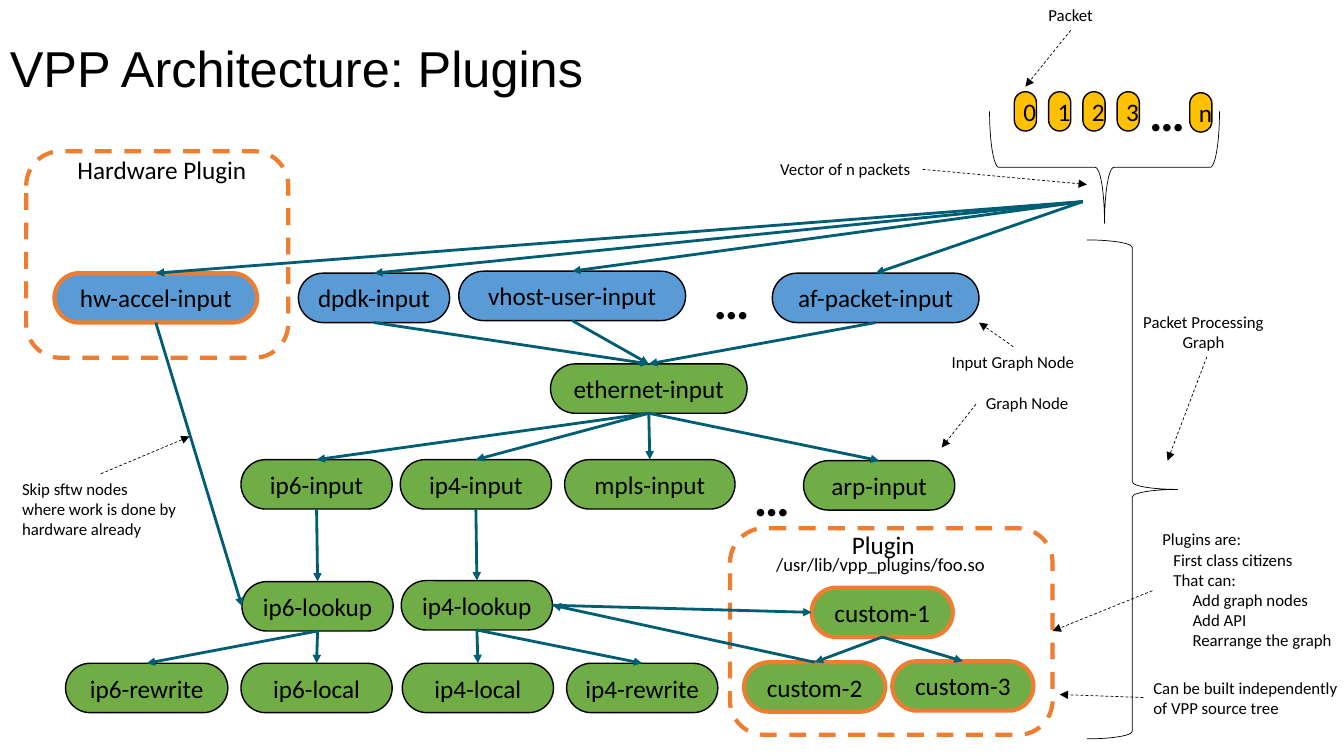
from lxml import etree
from pptx import Presentation
from pptx import util as u
from pptx.dml.color import RGBColor
from pptx.enum import dml, shapes, text
from pptx.oxml import ns

COLORS = {
    "ink": "000000", "packet": "FFC000", "input": "5B9BD5",
    "graph": "70AD47", "plugin": "ED7D31", "flow": "005E74",
}
TOP, LEFT, BOTTOM, RIGHT = range(4)  # connection sites of a rounded box
NODE_HEIGHT = 0.49


class Diagram:
    """Draws styled elements on the current slide."""

    font = "Calibri"

    def __init__(self, slide):
        self.slide = slide
        self.nodes = {}

    @staticmethod
    def color(name):
        return RGBColor.from_string(COLORS[name])

    def run(self, paragraph, words, size, font=None, bold=False):
        run = paragraph.add_run()
        run.text = words
        run.font.name = font or self.font
        run.font.size = u.Pt(size)
        run.font.bold = bold
        run.font.color.rgb = self.color("ink")

    def stroke(self, line, color, width, dashed=False):
        line.color.rgb = self.color(color)
        line.width = u.Pt(width)
        if dashed:
            line.dash_style = dml.MSO_LINE.DASH

    def shape(self, kind, box, line, width, fill=None, dashed=False):
        shape = self.slide.shapes.add_shape(kind, *map(u.Inches, box))
        shape.shadow.inherit = False
        if fill:
            shape.fill.solid()
            shape.fill.fore_color.rgb = self.color(fill)
        else:
            shape.fill.background()
        self.stroke(shape.line, line, width, dashed)
        return shape

    def pill(self, label, box, fill, line="ink", width=1):
        shape = self.shape(shapes.MSO_SHAPE.ROUNDED_RECTANGLE, box, line, width, fill)
        shape.adjustments[0] = 0.5
        frame = shape.text_frame
        frame.vertical_anchor = text.MSO_ANCHOR.MIDDLE
        paragraph = frame.paragraphs[0]
        paragraph.alignment = text.PP_ALIGN.CENTER
        self.run(paragraph, label, 18)
        return shape

    def node(self, label, left, top, width, fill, in_plugin=False):
        outline = ("plugin", 3) if in_plugin else ("ink", 1)
        box = (left, top, width, NODE_HEIGHT)
        self.nodes[label] = self.pill(label, box, fill, *outline)

    def plugin_frame(self, *box):
        self.shape(shapes.MSO_SHAPE.ROUNDED_RECTANGLE, box, "plugin", 3, dashed=True)

    def brace(self, box, rotation):
        self.shape(shapes.MSO_SHAPE.LEFT_BRACE, box, "ink", 0.5).rotation = rotation

    def label(self, box, lines, size=12, bold=False):
        """Each line is a string or (string, indent in inches, alignment)."""
        frame = self.slide.shapes.add_textbox(*map(u.Inches, box)).text_frame
        frame.word_wrap = False
        frame.auto_size = text.MSO_AUTO_SIZE.SHAPE_TO_FIT_TEXT
        for index, line in enumerate(lines):
            words, indent, alignment = (line, 0, None) if isinstance(line, str) else line
            paragraph = frame.add_paragraph() if index else frame.paragraphs[0]
            if indent:
                paragraph._p.get_or_add_pPr().set("marL", str(u.Inches(indent)))
            paragraph.alignment = alignment
            self.run(paragraph, words, size, bold=bold)

    def ellipsis(self, left, top):
        self.label((left, top, 0.56, 0.71), ["…"], 36, bold=True)

    def title(self, box, words):
        frame = self.slide.shapes.add_textbox(*map(u.Inches, box)).text_frame
        frame.word_wrap = True
        frame.vertical_anchor = text.MSO_ANCHOR.MIDDLE
        frame.paragraphs[0].line_spacing = 0.9
        self.run(frame.paragraphs[0], words, 36, "Arial")

    def arrow(self, start, end, color="ink", width=0.5, dashed=True):
        arrow = self.slide.shapes.add_connector(
            shapes.MSO_CONNECTOR.STRAIGHT, *map(u.Inches, (*start, *end)))
        self.stroke(arrow.line, color, width, dashed)
        head = etree.SubElement(arrow.line._get_or_add_ln(), ns.qn("a:tailEnd"))
        head.set("type", "triangle")
        etree.SubElement(arrow._element.spPr, ns.qn("a:effectLst"))
        return arrow

    def flow(self, source, target, leave=BOTTOM, enter=TOP):
        """Source is a node label or a point."""
        from_node = isinstance(source, str)
        start = (0, 0) if from_node else source
        arrow = self.arrow(start, (0, 0), "flow", 2, dashed=False)
        if from_node:
            arrow.begin_connect(self.nodes[source], leave)
        arrow.end_connect(self.nodes[target], enter)


def main():
    presentation = Presentation()
    presentation.slide_width = u.Inches(13.33)
    presentation.slide_height = u.Inches(7.5)
    diagram = Diagram(presentation.slides.add_slide(presentation.slide_layouts[6]))

    diagram.title((0, 0.17, 12.17, 1.07), "VPP Architecture: Plugins")

    # Packet vector
    for number in range(4):
        diagram.pill(str(number), (10.06 + 0.34 * number, 0.91, 0.22, 0.39), "packet")
    diagram.ellipsis(11.3, 0.76)
    diagram.pill("n", (11.8, 0.92, 0.22, 0.39), "packet")

    # Braces around the vector and the processing graph
    diagram.brace((10.4, 0.52, 1.11, 2.28), 270)
    diagram.brace((10.78, 2.38, 0.9, 4.95), 180)

    # Plugin frames
    diagram.plugin_frame(0.26, 1.5, 2.6, 2.05)
    diagram.label((0.67, 1.48, 1.9, 0.4), ["Hardware Plugin"], 18)
    diagram.plugin_frame(7.24, 5.24, 3.2, 2.05)
    diagram.label((7.6, 5.44, 2.29, 0.32), ["/usr/lib/vpp_plugins/foo.so"], 13.3)
    diagram.label((8.35, 5.2, 0.83, 0.4), ["Plugin"], 18)

    # Input nodes
    diagram.node("hw-accel-input", 0.54, 2.71, 2.01, "input", in_plugin=True)
    for label, left, top, width in [
        ("dpdk-input", 2.96, 2.71, 1.5),
        ("vhost-user-input", 4.55, 2.69, 2.25),
        ("af-packet-input", 7.66, 2.71, 2.05),
    ]:
        diagram.node(label, left, top, width, "input")
    diagram.ellipsis(6.98, 2.62)

    # Graph nodes
    for label, left, top, width in [
        ("ethernet-input", 5.46, 3.61, 1.95),
        ("ip6-input", 2.39, 4.56, 1.5),
        ("ip4-input", 3.97, 4.56, 1.5),
        ("mpls-input", 5.6, 4.56, 1.69),
        ("arp-input", 7.97, 4.57, 1.5),
        ("ip6-lookup", 2.4, 5.77, 1.5),
        ("ip4-lookup", 3.98, 5.76, 1.5),
        ("ip6-rewrite", 0.65, 6.58, 1.61),
        ("ip6-local", 2.39, 6.58, 1.5),
        ("ip4-local", 3.99, 6.58, 1.5),
        ("ip4-rewrite", 5.62, 6.58, 1.5),
    ]:
        diagram.node(label, left, top, width, "graph")
    diagram.ellipsis(7.38, 4.57)
    for label, left, top in [
        ("custom-1", 8.05, 5.83), ("custom-2", 7.38, 6.57), ("custom-3", 8.85, 6.56),
    ]:
        diagram.node(label, left, top, 1.4, "graph", in_plugin=True)

    # Flow from the vector through the graph
    for target in ("af-packet-input", "vhost-user-input", "dpdk-input", "hw-accel-input"):
        diagram.flow((10.74, 2), target)
    for source in ("vhost-user-input", "af-packet-input", "dpdk-input"):
        diagram.flow(source, "ethernet-input")
    for source, targets in {
        "ethernet-input": ("ip6-input", "mpls-input", "ip4-input", "arp-input"),
        "ip6-input": ("ip6-lookup",),
        "ip4-input": ("ip4-lookup",),
        "ip6-lookup": ("ip6-rewrite", "ip6-local"),
        "ip4-lookup": ("ip4-rewrite", "ip4-local"),
        "custom-1": ("custom-2", "custom-3"),
    }.items():
        for target in targets:
            diagram.flow(source, target)
    diagram.flow("ip4-lookup", "custom-1", RIGHT, LEFT)
    diagram.flow("custom-2", "ip4-lookup", TOP, RIGHT)
    diagram.flow("hw-accel-input", "ip6-lookup", BOTTOM, LEFT)

    # Annotations with their pointers
    center = text.PP_ALIGN.CENTER
    for box, lines, start, end in [
        ((10.3, 0, 0.65, 0.3), ["Packet"], (10.62, 0.3), (10.17, 0.86)),
        ((7.64, 1.53, 1.51, 0.3), ["Vector of n packets"], (9.15, 1.68), (10.78, 1.83)),
        ((11.24, 3.04, 1.45, 0.5), ["Packet Processing", ("Graph", 0, center)],
         (11.97, 3.54), (11.58, 4.57)),
        ((9.68, 3.85, 1.03, 0.3), ["Graph Node"], (9.68, 4.01), (9.34, 4.44)),
        ((9.34, 3.44, 1.43, 0.3), ["Input Graph Node"], (10.05, 3.44), (9.71, 3.2)),
        ((11.43, 5.2, 1.94, 1.31),
         ["Plugins are:", ("First class citizens", 0.11, None), ("That can:", 0.11, None),
          ("Add graph nodes", 0.3, None), ("Add API", 0.3, None),
          ("Rearrange the graph", 0.3, None)], (11.43, 5.86), (10.44, 6.26)),
        ((0.12, 4.7, 1.75, 0.71),
         ["Skip sftw nodes", "where work is done by", "hardware already"],
         (1, 4.7), (1.88, 4.33)),
        ((11.34, 6.67, 2.08, 0.5), ["Can be built independently", "of VPP source tree"],
         (11.34, 6.92), (10.51, 6.89)),
    ]:
        diagram.label(box, lines)
        diagram.arrow(start, end)

    presentation.save("out.pptx")


if __name__ == "__main__":
    main()
